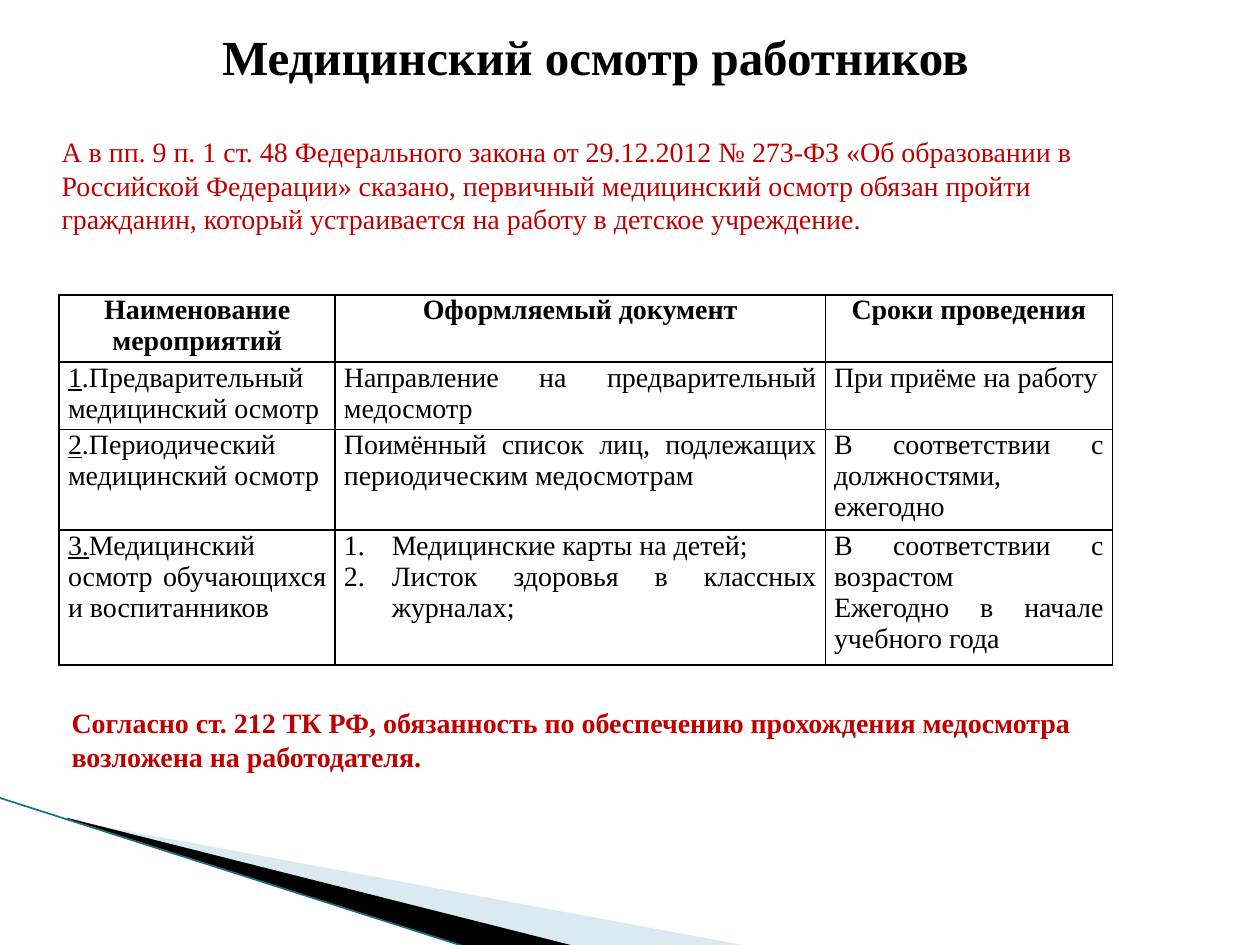
from dataclasses import dataclass
from lxml.etree import SubElement
from pptx import Presentation
from pptx.dml.color import RGBColor
from pptx.enum.shapes import MSO_CONNECTOR
from pptx.enum.text import MSO_AUTO_SIZE, PP_ALIGN
from pptx.oxml.ns import qn
from pptx.util import Inches, Pt

BLACK = RGBColor(0, 0, 0)
RED = RGBColor(0xC0, 0, 0)
PALE = RGBColor(0xA0, 0xCB, 0xDC)
TEAL = RGBColor(0x1A, 0x6E, 0x85)
FACE = "Times New Roman"

Box = tuple[float, float, float, float]


@dataclass
class Label:
    text: str
    box: Box
    color: RGBColor = RED
    size: int = 16
    bold: bool = False
    align: PP_ALIGN = PP_ALIGN.LEFT


@dataclass
class Wedge:
    points: list[tuple[int, int]]
    box: Box
    color: RGBColor
    alpha: int = 100


@dataclass
class Entry:
    lines: list[str]
    mark: str = ""
    listed: bool = False
    head: bool = False


WEDGES = [
    Wedge([(55, 651), (595, 751), (456, 751), (55, 650)],
          (0.78, 5.47, 4.16, 1.58), PALE, 40),
    Wedge([(53, 649), (457, 751), (372, 752), (54, 650)],
          (-0.06, 6.33, 4.16, 0.92), BLACK),
]
LABELS = [
    Label("Медицинский осмотр работников", (0.78, 0.16, 7.89, 0.57),
          BLACK, 28, True, PP_ALIGN.CENTER),
    Label("А в пп. 9 п. 1 ст. 48 Федерального закона от 29.12.2012 № 273-ФЗ "
          "«Об образовании в Российской Федерации» сказано, первичный "
          "медицинский осмотр обязан пройти гражданин, который устраивается "
          "на работу в детское учреждение.", (0.39, 1.02, 8.91, 0.91)),
    Label("Согласно ст. 212 ТК РФ, обязанность по обеспечению прохождения "
          "медосмотра возложена на работодателя.", (0.47, 5.55, 8.44, 0.64),
          bold=True),
]
COLS = [2.19, 3.89, 2.28]
ROWS = [0.53, 0.53, 0.8, 1.07]
ENTRIES = [
    [Entry(["Наименование мероприятий"], head=True),
     Entry(["Оформляемый документ"], head=True),
     Entry(["Сроки проведения"], head=True)],
    [Entry([".Предварительный медицинский осмотр"], "1"),
     Entry(["Направление на предварительный медосмотр "]),
     Entry(["При приёме на работу"])],
    [Entry([".Периодический медицинский осмотр"], "2"),
     Entry(["Поимённый список лиц, подлежащих периодическим медосмотрам"]),
     Entry(["В соответствии с должностями, ежегодно"])],
    [Entry(["Медицинский осмотр обучающихся и воспитанников"], "3."),
     Entry(["Медицинские карты на детей;",
            "Листок здоровья в классных журналах;"], listed=True),
     Entry(["В соответствии с возрастом", "Ежегодно в начале учебного года"])],
]


def style(para, size: int, color: RGBColor, bold: bool, align: PP_ALIGN) -> None:
    font = para.font
    font.name, font.size, font.bold = FACE, Pt(size), bold
    font.color.rgb = color
    para.alignment = align


def number(para) -> None:
    props = para._p.get_or_add_pPr()
    props.set("marL", str(Inches(0.38)))
    props.set("indent", str(Inches(-0.38)))
    SubElement(props, qn("a:buFont"), typeface="+mj-lt")
    SubElement(props, qn("a:buAutoNum"), type="arabicPeriod")
    tabs = SubElement(props, qn("a:tabLst"))
    SubElement(tabs, qn("a:tab"), pos=str(Inches(0.25)), algn="l")


def border(cell) -> None:
    props = cell._tc.get_or_add_tcPr()
    for side in ("a:lnL", "a:lnR", "a:lnT", "a:lnB"):
        line = SubElement(props, qn(side), w=str(Pt(1)))
        fill = SubElement(line, qn("a:solidFill"))
        SubElement(fill, qn("a:srgbClr"), val=str(BLACK))
    cell.fill.background()


def set_frame(shape, box: Box) -> None:
    left, top, width, height = map(Inches, box)
    outline = shape._element.spPr.find(".//" + qn("a:path"))
    scale = Inches(0.01)
    for point in outline.iter(qn("a:pt")):
        across = int(point.get("x")) * scale + shape.left - left
        down = int(point.get("y")) * scale + shape.top - top
        point.set("x", str(across))
        point.set("y", str(down))
    outline.set("w", str(width))
    outline.set("h", str(height))
    shape.left, shape.top = left, top
    shape.width, shape.height = width, height


def draw_wedge(slide, wedge: Wedge) -> None:
    first, *rest = wedge.points
    draft = slide.shapes.build_freeform(*first, scale=Inches(0.01))
    draft.add_line_segments(rest, close=True)
    shape = draft.convert_to_shape()
    set_frame(shape, wedge.box)
    shape.shadow.inherit = False
    shape.line.fill.background()
    shape.fill.solid()
    shape.fill.fore_color.rgb = wedge.color
    if wedge.alpha < 100:
        tint = shape._element.spPr.find(".//" + qn("a:srgbClr"))
        SubElement(tint, qn("a:alpha"), val=str(wedge.alpha * 1000))


def draw_edge(slide) -> None:
    edge = slide.shapes.add_connector(
        MSO_CONNECTOR.STRAIGHT,
        Inches(-0.01), Inches(6.33), Inches(3.71), Inches(7.52))
    edge.line.color.rgb = TEAL
    edge.line.width = Pt(0.95)
    SubElement(edge._element.spPr, qn("a:effectLst"))


def draw_label(slide, label: Label) -> None:
    frame = slide.shapes.add_textbox(*map(Inches, label.box)).text_frame
    frame.word_wrap = True
    frame.auto_size = MSO_AUTO_SIZE.SHAPE_TO_FIT_TEXT
    para = frame.paragraphs[0]
    para.text = label.text
    style(para, label.size, label.color, label.bold, label.align)


def fill_cell(cell, entry: Entry) -> None:
    cell.margin_left = cell.margin_right = Inches(0.07)
    cell.margin_top = cell.margin_bottom = 0
    border(cell)
    frame = cell.text_frame
    align = PP_ALIGN.CENTER if entry.head else PP_ALIGN.JUSTIFY
    for index, text in enumerate(entry.lines):
        para = frame.add_paragraph() if index else frame.paragraphs[0]
        if entry.listed:
            number(para)
        if entry.mark:
            run = para.add_run()
            run.text = entry.mark
            run.font.underline = True
        para.add_run().text = text
        style(para, 16, BLACK, entry.head, align)


def draw_table(slide) -> None:
    table = slide.shapes.add_table(
        len(ROWS), len(COLS), Inches(0.47), Inches(2.34),
        Inches(sum(COLS)), Inches(sum(ROWS))).table
    table.first_row = table.horz_banding = False
    for col, width in zip(table.columns, COLS):
        col.width = Inches(width)
    for row, height, entries in zip(table.rows, ROWS, ENTRIES):
        row.height = Inches(height)
        for cell, entry in zip(row.cells, entries):
            fill_cell(cell, entry)


def main() -> None:
    deck = Presentation()
    deck.slide_width, deck.slide_height = Inches(10), Inches(7.5)
    slide = deck.slides.add_slide(deck.slide_layouts[6])
    for wedge in WEDGES:
        draw_wedge(slide, wedge)
    draw_edge(slide)
    title, *notes = LABELS
    draw_label(slide, title)
    draw_table(slide)
    for note in notes:
        draw_label(slide, note)
    deck.save("out.pptx")


if __name__ == "__main__":
    main()
